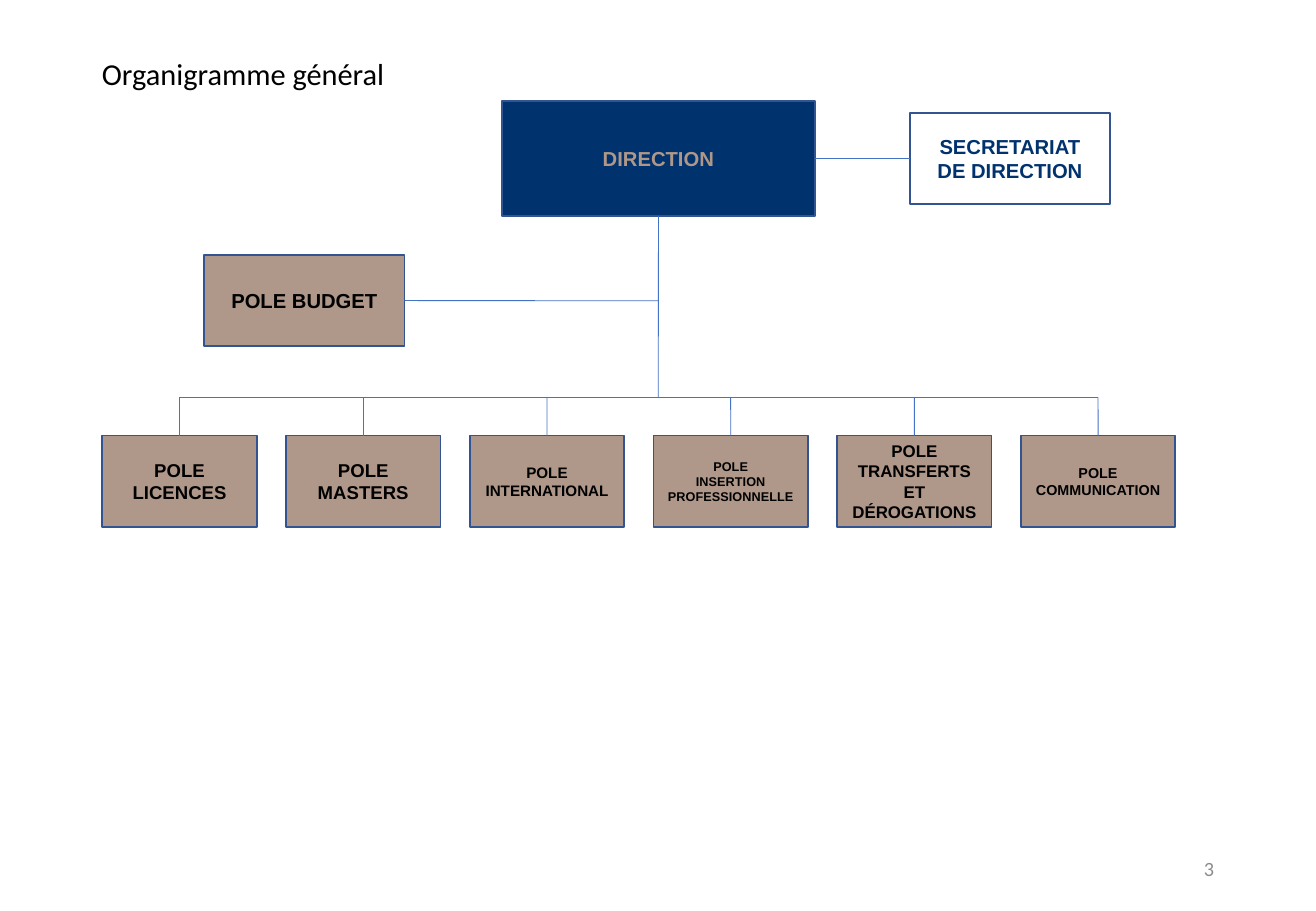
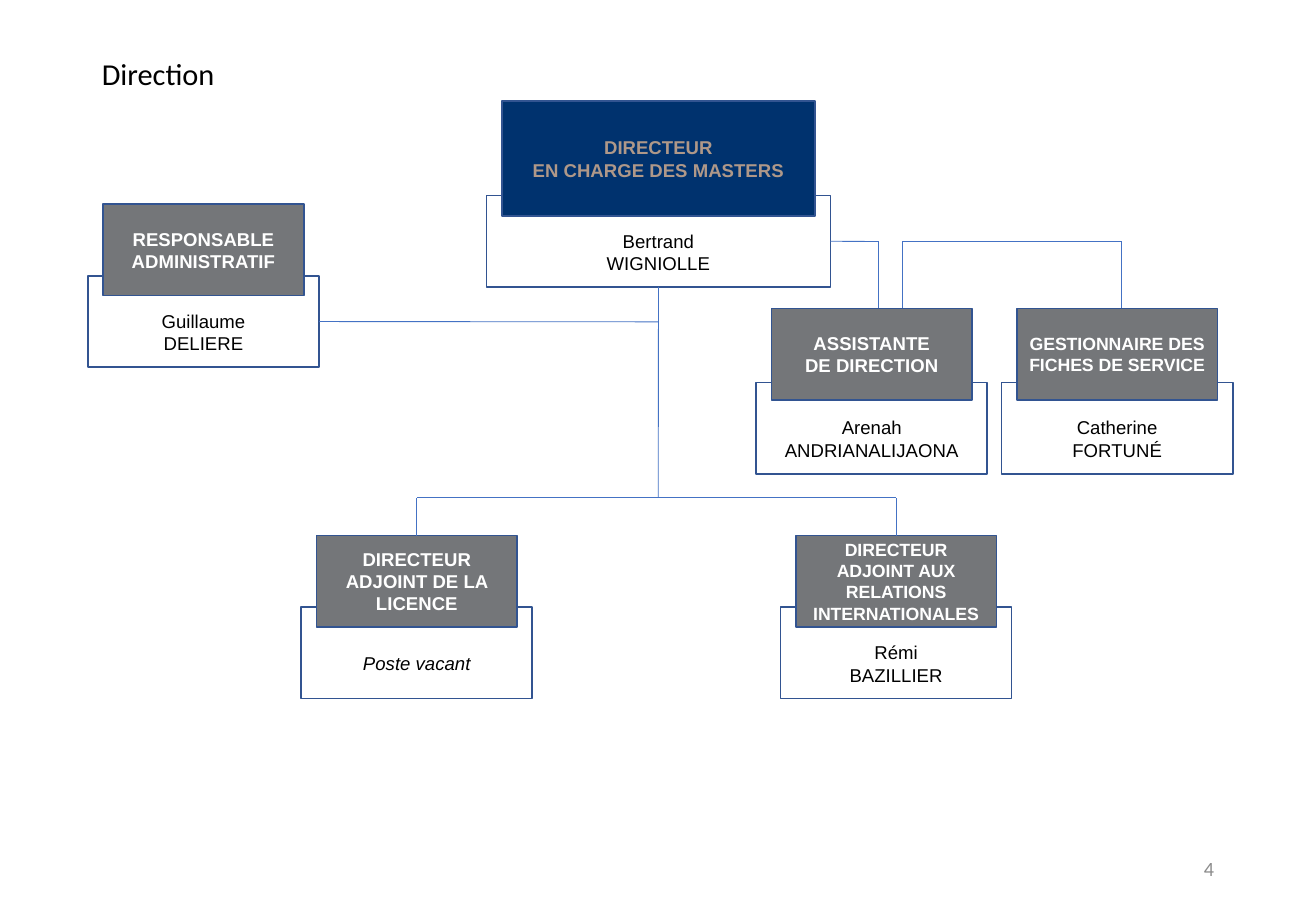
from pptx import Presentation
from pptx.dml.color import RGBColor
from pptx.enum.shapes import MSO_CONNECTOR, MSO_SHAPE
from pptx.enum.text import MSO_ANCHOR, PP_ALIGN
from pptx.oxml.xmlchemy import OxmlElement
from pptx.util import Cm, Pt

NAVY = RGBColor(0x00, 0x32, 0x6E)
TAUPE = RGBColor(0xAF, 0x98, 0x89)
GREY = RGBColor(0x74, 0x76, 0x79)
PALE = RGBColor(0x8C, 0x8C, 0x8C)
EDGE = RGBColor(0x32, 0x54, 0x91)
BLUE = RGBColor(0x44, 0x72, 0xC4)
WHITE = RGBColor(0xFF, 0xFF, 0xFF)
BLACK = RGBColor(0, 0, 0)

# Box sizes in cm
WIDE, HIGH = 4.19, 1.91
HEAD = dict(x=10.49, y=2.11, w=6.55, h=2.41)
TRUNK = 13.76


def write(shape, text, size=11, color=BLACK, font="Arial", bold=False,
          italic=False, align=PP_ALIGN.CENTER, space=None, side=0.24, top=0.13):
    """Fill a shape with text, one paragraph per line."""
    frame = shape.text_frame
    frame.word_wrap = True
    frame.vertical_anchor = MSO_ANCHOR.MIDDLE
    frame.margin_left = frame.margin_right = Cm(side)
    frame.margin_top, frame.margin_bottom = Cm(top), Cm(0.13)
    frame.text = text
    for para in frame.paragraphs:
        para.alignment = align
        para.line_spacing = space
        for run in para.runs:
            face = run.font
            face.name, face.size = font, Pt(size)
            face.bold, face.italic = bold, italic
            face.color.rgb = color


def label(slide, text, x, y, w, h, **form):
    """Add a plain text box."""
    write(slide.shapes.add_textbox(Cm(x), Cm(y), Cm(w), Cm(h)), text, **form)


def box(slide, text, x, y, w=WIDE, h=HIGH, fill=WHITE, **form):
    """Add an outlined rectangle with text."""
    rect = slide.shapes.add_shape(
        MSO_SHAPE.RECTANGLE, Cm(x), Cm(y), Cm(w), Cm(h))
    rect.shadow.inherit = False
    rect.fill.solid()
    rect.fill.fore_color.rgb = fill
    rect.line.color.rgb = EDGE
    rect.line.width = Pt(1)
    write(rect, text, **form)
    return rect


def card(slide, role, name, x, y, w=WIDE, h=HIGH, drop=1.5, fill=GREY,
         color=WHITE, size=11, italic=False):
    """Add a role box over the box of its holder; return both."""
    # The deeper top margin keeps the name clear of the role box
    holder = box(slide, name, x - 0.32, y + drop, w + 0.64,
                 italic=italic, top=0.57)
    post = box(slide, role, x, y, w, h, fill, color=color, size=size, bold=True)
    return post, holder


def link(slide, x1, y1, x2, y2, start=None, stop=None):
    """Add a thin line; start and stop are (shape, side) to join."""
    line = slide.shapes.add_connector(
        MSO_CONNECTOR.STRAIGHT, Cm(x1), Cm(y1), Cm(x2), Cm(y2))
    line.line.color.rgb = BLUE
    line.line.width = Pt(0.5)
    line._element.spPr.append(OxmlElement("a:effectLst"))
    if start:
        line.begin_connect(*start)
    if stop:
        line.end_connect(*stop)


def page(deck, title, number):
    """Add a slide with its title and number."""
    slide = deck.slides.add_slide(deck.slide_layouts[6])
    label(slide, title, 1.88, 1.07, 23.72, 1.02, size=18, font="Calibri",
          align=PP_ALIGN.LEFT, space=0.9, side=0.25)
    label(slide, str(number), 19.43, 17.65, 6.2, 1.02, size=12, color=PALE,
          font="Calibri", align=PP_ALIGN.RIGHT, side=0.25)
    return slide


def chart(deck):
    """General chart."""
    slide = page(deck, "Organigramme général", 3)
    bus, mid = 8.31, 6.29

    # Top boxes
    head = box(slide, "DIRECTION", **HEAD, fill=NAVY, size=12, color=TAUPE,
               bold=True)
    desk = box(slide, "SECRETARIAT\nDE DIRECTION", 19.02, 2.36, size=12,
               color=NAVY, bold=True)
    fund = box(slide, "POLE BUDGET", 4.27, 5.33, fill=TAUPE, size=12, bold=True)
    link(slide, 17.04, 3.31, 19.02, 3.31, (head, 3), (desk, 1))
    link(slide, TRUNK, 4.52, TRUNK, bus, (head, 2))
    link(slide, 8.46, mid, TRUNK, mid, (fund, 3))

    # Row of units
    units = [
        ("POLE LICENCES", 11),
        ("POLE MASTERS", 11),
        ("POLE INTERNATIONAL", 9),
        ("POLE\nINSERTION PROFESSIONNELLE", 7.5),
        ("POLE\nTRANSFERTS ET DÉROGATIONS", 10),
        ("POLE COMMUNICATION", 8.5),
    ]
    left, step, wide, top = 2.14, 3.84, 3.23, 9.11
    first = left + wide / 2
    for i, (text, size) in enumerate(units):
        unit = box(slide, text, left + i * step, top, wide, fill=TAUPE,
                   size=size, bold=True)
        x = first + i * step
        link(slide, x, top, x, bus, (unit, 0))
    link(slide, first, bus, first + (len(units) - 1) * step, bus)


def board(deck):
    """Management chart."""
    slide = page(deck, "Direction", 4)
    bus, bend, mid = 10.41, 5.05, 6.73

    # Head and administration
    _, chief = card(slide, "DIRECTEUR\vEN CHARGE DES MASTERS",
                    "Bertrand\nWIGNIOLLE", **HEAD, drop=1.98, fill=NAVY,
                    color=TAUPE)
    _, admin = card(slide, "RESPONSABLE ADMINISTRATIF", "Guillaume\nDELIERE",
                    2.16, 4.27)
    link(slide, TRUNK, 6, TRUNK, bus, (chief, 2))
    link(slide, 6.67, mid, TRUNK, mid, (admin, 3))

    # Assistants
    desk = 6.45
    card(slide, "ASSISTANTE\nDE DIRECTION", "Arenah ANDRIANALIJAONA",
         16.13, desk, drop=1.55)
    card(slide, "GESTIONNAIRE DES FICHES DE SERVICE", "Catherine\nFORTUNÉ",
         21.26, desk, drop=1.55, size=10.5)
    near, back, far = 18.36, 18.87, 23.44
    link(slide, 17.37, bend, near, bend, (chief, 3))
    link(slide, back, bend, far, bend)
    for x in (near, back, far):
        link(slide, x, bend, x, desk)

    # Deputies
    top = 11.2
    team = [
        ("DIRECTEUR ADJOINT DE LA LICENCE", "Poste vacant", 6.62, 11, True),
        ("DIRECTEUR ADJOINT AUX RELATIONS INTERNATIONALES",
         "Rémi\nBAZILLIER", 16.64, 10.5, False),
    ]
    ends = []
    for role, name, x, size, italic in team:
        post, _ = card(slide, role, name, x, top, size=size, italic=italic)
        ends.append(x + WIDE / 2)
        link(slide, ends[-1], top, ends[-1], bus, (post, 0))
    link(slide, ends[0], bus, ends[-1], bus)


def main():
    deck = Presentation()
    deck.slide_width, deck.slide_height = Cm(27.51), Cm(19.05)
    chart(deck)
    board(deck)
    deck.save("out.pptx")


if __name__ == "__main__":
    main()
